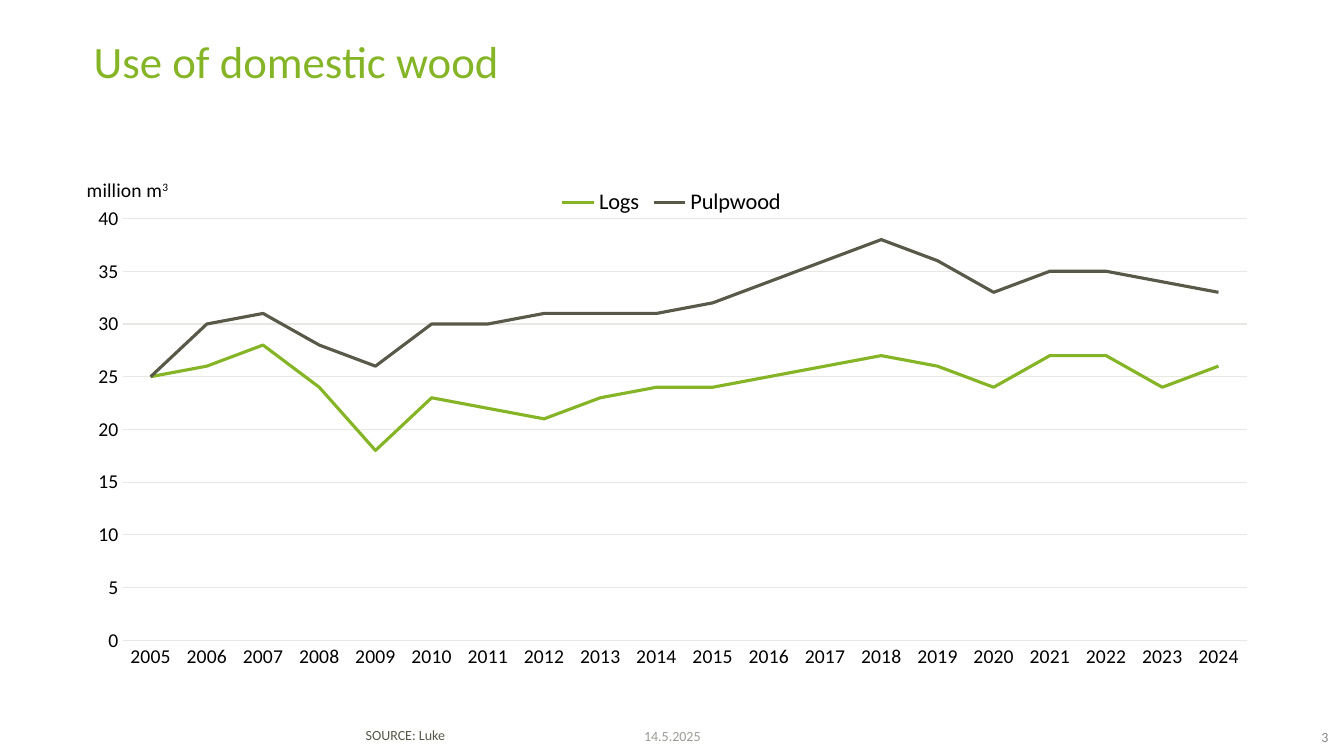
from dataclasses import dataclass
from typing import Any

import pptx
import pptx.chart.data
import pptx.dml.color
import pptx.enum.chart
import pptx.enum.text
import pptx.oxml
import pptx.oxml.ns
import pptx.util

Pt = pptx.util.Pt
ALIGN = pptx.enum.text.PP_ALIGN
ANCHOR = pptx.enum.text.MSO_ANCHOR
FONT = "Calibri"
GREEN, OLIVE, GRID, BLACK = "85B526", "59594A", "E7E7E3", "000000"


@dataclass
class Series:
    name: str
    color: str
    values: list[int]


@dataclass
class Label:
    text: str
    box: tuple[float, float, float, float]
    color: str
    align: Any = ALIGN.LEFT
    anchor: Any = ANCHOR.MIDDLE
    insets: tuple[float, float, float, float] = (7.2, 3.6, 7.2, 3.6)
    size: float = 10
    spacing: float = 1.0


YEARS = [str(year) for year in range(2005, 2025)]
SERIES = [
    Series("Logs", GREEN, [25, 26, 28, 24, 18, 23, 22, 21, 23, 24,
                           24, 25, 26, 27, 26, 24, 27, 27, 24, 26]),
    Series("Pulpwood", OLIVE, [25, 30, 31, 28, 26, 30, 30, 31, 31, 31,
                               32, 34, 36, 38, 36, 33, 35, 35, 34, 33]),
]
TITLE = Label("Use of domestic wood", (59.76, 28.08, 841.68, 70.56), GREEN,
              anchor=ANCHOR.TOP, size=32, spacing=0.8)
LABELS = [
    Label("3", (910.8, 521.28, 38.16, 13.68), "878787", ALIGN.RIGHT,
          insets=(0, 0, 0, 2.88)),
    Label("SOURCE: Luke", (254.16, 516.96, 516.96, 19.44), "58594A",
          anchor=ANCHOR.TOP, spacing=0.85),
    Label("14.5.2025", (372.24, 514.8, 216, 22.32), "9B9B96", ALIGN.CENTER),
]


def rgb(color: str) -> pptx.dml.color.RGBColor:
    return pptx.dml.color.RGBColor.from_string(color)


def set_font(font: Any, size: float, color: str) -> None:
    font.name, font.size, font.bold = FONT, Pt(size), False
    font.color.rgb = rgb(color)


def set_line(line: Any, color: str, width: float) -> None:
    line.color.rgb = rgb(color)
    line.width = Pt(width)


def add_run(p: Any, text: str, *, size: float, color: str, superscript: bool = False) -> None:
    r = p.add_run()
    r.text = text
    set_font(r.font, size, color)
    if superscript:
        r._r.get_or_add_rPr().set("baseline", "30000")


def write_label(sp: Any, label: Label) -> None:
    sp.left, sp.top, sp.width, sp.height = map(Pt, label.box)
    tf = sp.text_frame
    tf.word_wrap = True
    tf.auto_size = pptx.enum.text.MSO_AUTO_SIZE.NONE
    tf.vertical_anchor = label.anchor
    tf.margin_left, tf.margin_top, tf.margin_right, tf.margin_bottom = map(Pt, label.insets)
    p = tf.paragraphs[0]
    p.alignment = label.align
    p.line_spacing = label.spacing
    add_run(p, label.text, size=label.size, color=label.color)


def set_layout(element: Any, index: int, inner: bool = False, **fractions: float) -> None:
    for old in element.findall(pptx.oxml.ns.qn("c:layout")):
        element.remove(old)
    target = '<c:layoutTarget val="inner"/>' if inner else ""
    modes = "".join(f'<c:{key}Mode val="edge"/>' for key in ("x", "y"))
    sizes = "".join(f'<c:{key} val="{value}"/>' for key, value in fractions.items())
    element.insert(index, pptx.oxml.parse_xml(
        f'<c:layout {pptx.oxml.ns.nsdecls("c")}><c:manualLayout>'
        f"{target}{modes}{sizes}</c:manualLayout></c:layout>"))


def add_wood_chart(s: Any) -> None:
    data = pptx.chart.data.CategoryChartData(number_format="#,##0")
    data.categories = YEARS
    for series in SERIES:
        data.add_series(series.name, series.values)
    chart = s.shapes.add_chart(pptx.enum.chart.XL_CHART_TYPE.LINE, Pt(59.76), Pt(113.04),
                               Pt(841.68), Pt(371.52), data).chart
    set_font(chart.font, 10, OLIVE)
    plot = chart.plots[0]
    plot.vary_by_categories = False
    for line, series in zip(plot.series, SERIES):
        line.smooth = False
        set_line(line.format.line, series.color, 2.25)

    for axis in (chart.category_axis, chart.value_axis):
        axis.major_tick_mark = axis.minor_tick_mark = pptx.enum.chart.XL_TICK_MARK.NONE
        set_font(axis.tick_labels.font, 14, BLACK)
    set_line(chart.category_axis.format.line, GRID, 0.75)
    values = chart.value_axis
    values.minimum_scale, values.maximum_scale, values.major_unit = 0, 40, 5
    values.tick_labels.number_format = "#,##0"
    values.tick_labels.number_format_is_linked = False
    values.format.line.fill.background()
    set_line(values.major_gridlines.format.line, GRID, 0.75)

    chart.has_title = True
    p = chart.chart_title.text_frame.paragraphs[0]
    add_run(p, "million m", size=14, color=BLACK)
    add_run(p, "3", size=14, color=BLACK, superscript=True)
    chart.has_legend = True
    legend = chart.legend
    legend.position = pptx.enum.chart.XL_LEGEND_POSITION.TOP
    legend.include_in_layout = False
    set_font(legend.font, 16, BLACK)

    set_layout(chart.chart_title._element, 1, x=0.0, y=0.03)
    set_layout(legend._element, 1, x=0.4, y=0.05)
    set_layout(chart._chartSpace.chart.plotArea, 0, inner=True,
               x=0.033, y=0.116, w=0.954, h=0.811)


def main() -> None:
    prs = pptx.Presentation()
    prs.slide_width, prs.slide_height = Pt(960), Pt(540)
    s = prs.slides.add_slide(prs.slide_layouts.get_by_name("Title Only"))
    write_label(s.shapes.title, TITLE)
    add_wood_chart(s)
    for label in LABELS:
        write_label(s.shapes.add_textbox(*map(Pt, label.box)), label)
    prs.save("out.pptx")


if __name__ == "__main__":
    main()
